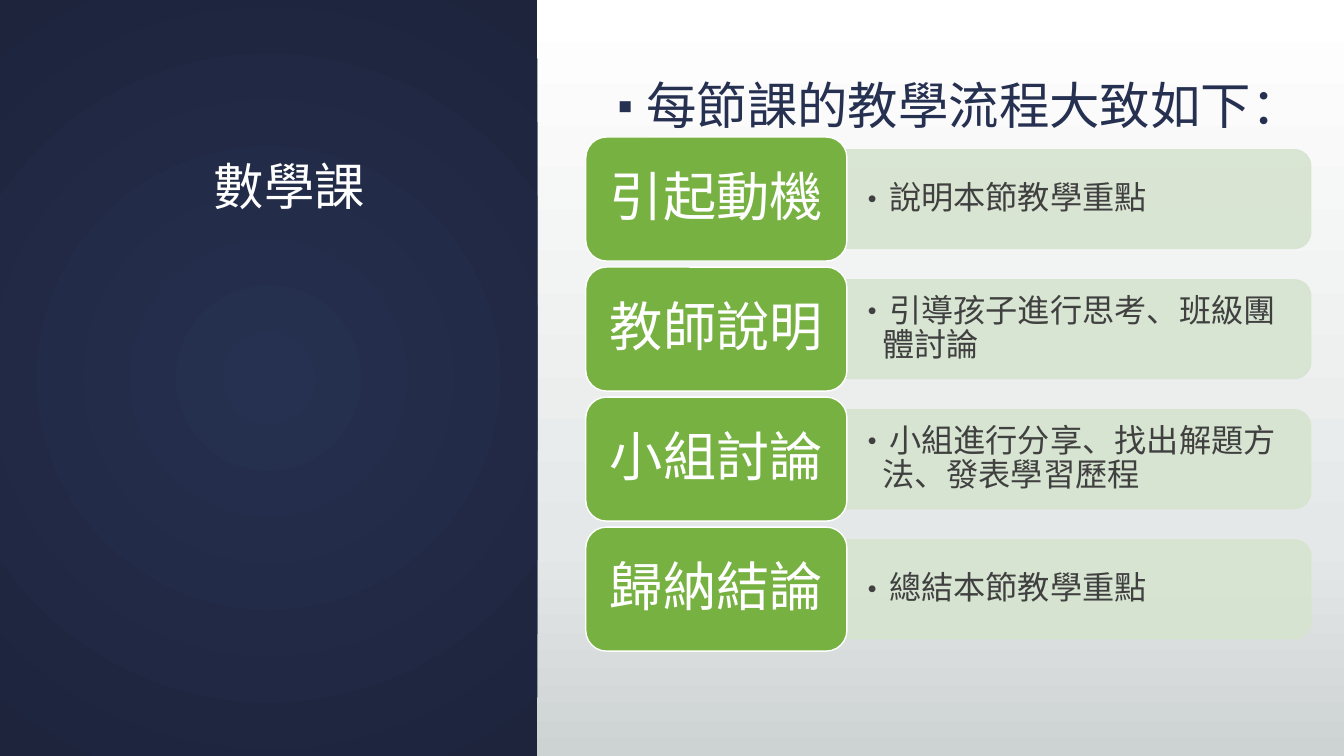
"""Build a slide listing the four steps of a mathematics lesson."""
from dataclasses import dataclass

from lxml import etree
from pptx import Presentation
from pptx import util as u
from pptx.dml.color import RGBColor
from pptx.enum import shapes, text
from pptx.oxml import parse_xml
from pptx.oxml.ns import nsdecls, qn


@dataclass(frozen=True)
class Theme:
    font: str = "Noto Sans CJK SC"
    white: str = "FFFFFF"
    navy: str = "263050"
    navy_dark: str = "1D243C"
    green: str = "77B142"
    green_pale: str = "D6E4CF"
    gray: str = "404040"
    gray_light: str = "E5E8E8"
    gray_cool: str = "CDD2D2"
    heading_size: int = 36
    label_size: int = 38
    detail_size: int = 23


@dataclass(frozen=True)
class Step:
    label: str
    detail: str


THEME = Theme()
STEPS = (
    Step("引起動機", "說明本節教學重點"),
    Step("教師說明", "引導孩子進行思考、班級團體討論"),
    Step("小組討論", "小組進行分享、找出解題方法、發表學習歷程"),
    Step("歸納結論", "總結本節教學重點"),
)
STEP_LEFT, STEP_TOP, STEP_PITCH = 5.81, 1.36, 1.29
LABEL_WIDTH, LABEL_HEIGHT = 2.59, 1.23
DETAIL_WIDTH, DETAIL_HEIGHT = 4.55, 0.89
TAB_LENGTH, TAB_DEPTH = 4.6, 0.98


def place(shape, left: float, top: float, width: float, height: float) -> None:
    shape.left, shape.top = u.Inches(left), u.Inches(top)
    shape.width, shape.height = u.Inches(width), u.Inches(height)


def set_gradient(parent, stops: list[tuple[int, str]], direction: str) -> None:
    """Swap the solid fill inside parent for a gradient."""
    colors = "".join(
        f'<a:gs pos="{position * 1000}"><a:srgbClr val="{color}"/></a:gs>'
        for position, color in stops
    )
    gradient = parse_xml(
        f'<a:gradFill {nsdecls("a")} rotWithShape="1">'
        f"<a:gsLst>{colors}</a:gsLst>{direction}</a:gradFill>"
    )
    parent.replace(parent.find(qn("a:solidFill")), gradient)


def write(frame, words: str, size: int, color: str,
          align=text.PP_ALIGN.LEFT, anchor=text.MSO_ANCHOR.MIDDLE,
          insets: tuple[float, float] = (0.1, 0.05)):
    frame.word_wrap = True
    frame.auto_size = text.MSO_AUTO_SIZE.NONE
    frame.vertical_anchor = anchor
    frame.margin_left = frame.margin_right = u.Inches(insets[0])
    frame.margin_top = frame.margin_bottom = u.Inches(insets[1])
    paragraph = frame.paragraphs[0]
    paragraph.alignment = align
    paragraph.line_spacing = 0.9
    paragraph.space_before = u.Pt(0)
    run = paragraph.add_run()
    run.text = words
    run.font.size = u.Pt(size)
    run.font.name = THEME.font
    run.font.color.rgb = RGBColor.from_string(color)
    properties = run.font._element
    etree.SubElement(properties, qn("a:ea")).set("typeface", THEME.font)
    return paragraph


def add_bullet(paragraph, character: str, color: str, percent: int,
               margin: float, hanging: float) -> None:
    properties = paragraph._p.get_or_add_pPr()
    properties.set("marL", str(u.Inches(margin)))
    properties.set("indent", str(-u.Inches(hanging)))
    for tag, attribute, value in (("buSzPct", "val", str(percent * 1000)),
                                  ("buFont", "typeface", THEME.font),
                                  ("buChar", "char", character)):
        etree.SubElement(properties, qn(f"a:{tag}")).set(attribute, value)
    bullet_color = parse_xml(
        f'<a:buClr {nsdecls("a")}><a:srgbClr val="{color}"/></a:buClr>'
    )
    properties.find(qn("a:buSzPct")).addprevious(bullet_color)


def add_block(slide, kind, box: tuple[float, float, float, float],
              fill: str, line: str | None = None):
    shape = slide.shapes.add_shape(kind, *map(u.Inches, box))
    shape.shadow.inherit = False
    shape.fill.solid()
    shape.fill.fore_color.rgb = RGBColor.from_string(fill)
    if line is None:
        shape.line.fill.background()
    else:
        shape.line.color.rgb = RGBColor.from_string(line)
        shape.line.width = u.Pt(1)
    return shape


def add_step(slide, step: Step, top: float) -> None:
    middle = top + LABEL_HEIGHT / 2
    detail_left = STEP_LEFT + LABEL_WIDTH
    tab_box = (detail_left + (TAB_LENGTH - TAB_DEPTH) / 2,
               middle - TAB_LENGTH / 2, TAB_DEPTH, TAB_LENGTH)
    tab = add_block(slide, shapes.MSO_SHAPE.ROUND_2_SAME_RECTANGLE, tab_box,
                    THEME.green_pale, THEME.green_pale)
    tab.rotation = 90
    for color in tab.element.spPr.iter(qn("a:srgbClr")):
        etree.SubElement(color, qn("a:alpha")).set("val", "90000")

    detail_box = (detail_left, middle - DETAIL_HEIGHT / 2,
                  DETAIL_WIDTH, DETAIL_HEIGHT)
    detail = slide.shapes.add_textbox(*map(u.Inches, detail_box))
    paragraph = write(detail.text_frame, step.detail,
                      THEME.detail_size, THEME.gray)
    add_bullet(paragraph, "•", THEME.gray, 100, 0.25, 0.25)

    label = add_block(slide, shapes.MSO_SHAPE.ROUNDED_RECTANGLE,
                      (STEP_LEFT, top, LABEL_WIDTH, LABEL_HEIGHT),
                      THEME.green, THEME.white)
    write(label.text_frame, step.label, THEME.label_size, THEME.white,
          align=text.PP_ALIGN.CENTER, insets=(0.16, 0.08))


def main() -> None:
    presentation = Presentation()
    presentation.slide_width = u.Inches(13.33)
    presentation.slide_height = u.Inches(7.5)
    slide = presentation.slides.add_slide(presentation.slide_layouts[1])
    slide.background.fill.solid()
    set_gradient(next(slide.element.iter(qn("p:bgPr"))),
                 [(0, THEME.white), (72, THEME.gray_light), (100, THEME.gray_cool)],
                 '<a:lin ang="5400000" scaled="0"/>')

    title, body = slide.shapes.title, slide.placeholders[1]
    panel = add_block(slide, shapes.MSO_SHAPE.RECTANGLE,
                      (0, 0, 5.33, 7.5), THEME.navy)
    set_gradient(panel.element.spPr, [(0, THEME.navy), (100, THEME.navy_dark)],
                 '<a:path path="circle"><a:fillToRect l="50000" t="50000" '
                 'r="50000" b="50000"/></a:path>')
    title.element.addprevious(panel.element)

    place(title, 0.72, 0.59, 4.3, 2.21)
    write(title.text_frame, "數學課", THEME.heading_size, THEME.white,
          align=text.PP_ALIGN.CENTER, anchor=text.MSO_ANCHOR.BOTTOM)
    title.text_frame.margin_bottom = u.Inches(0.65)

    place(body, 5.86, 0.75, 6.97, 6)
    paragraph = write(body.text_frame, "每節課的教學流程大致如下：",
                      THEME.heading_size, THEME.navy,
                      anchor=text.MSO_ANCHOR.TOP)
    add_bullet(paragraph, "▪", THEME.navy, 80, 0.3, 0.25)

    for index, step in enumerate(STEPS):
        add_step(slide, step, STEP_TOP + index * STEP_PITCH)
    presentation.save("out.pptx")


if __name__ == "__main__":
    main()
